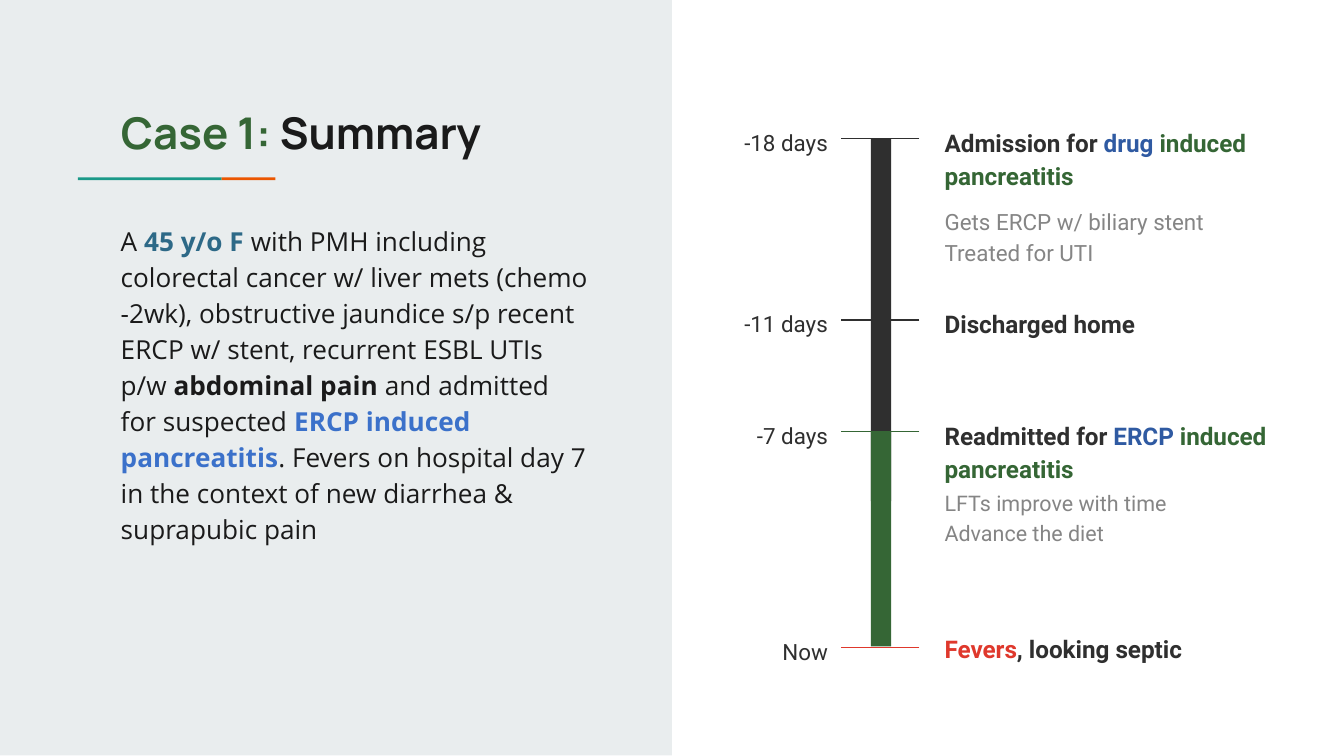
"""Build the case summary slide with its admission timeline."""
from lxml.etree import SubElement
from pptx import Presentation
from pptx.dml.color import RGBColor
from pptx.enum.shapes import MSO_CONNECTOR, MSO_SHAPE
from pptx.enum.text import MSO_ANCHOR, MSO_AUTO_SIZE, PP_ALIGN
from pptx.oxml.ns import qn
from pptx.util import Inches, Pt

COLORS = {
    "panel": "E9EDEE", "teal": "1A9988", "orange": "EB5600",
    "black": "1A1A1A", "dark": "2F2F2F", "gray": "858585",
    "green": "356635", "blue": "2F5AA2", "red": "DF382C",
    "steel": "2D6987", "sky": "3B71CA",
}

SUMMARY = [
    ("A ", "black", False),
    ("45 y/o F", "steel", True),
    (" with PMH including colorectal cancer w/ liver mets (chemo -2wk), "
     "obstructive jaundice s/p recent ERCP w/ stent, recurrent ESBL UTIs p/w ",
     "black", False),
    ("abdominal pain", "black", True),
    (" and admitted for suspected ", "black", False),
    ("ERCP induced pancreatitis", "sky", True),
    (". Fevers on hospital day 7 in the context of new diarrhea & suprapubic pain",
     "black", False),
]

EVENTS = [
    {"when": "-18 days", "top": 1.03, "color": "dark", "bar": 1.34,
     "heading": [[("Admission for ", "dark"), ("drug ", "blue"), ("induced", "green")],
                 [("pancreatitis", "green")]],
     "details": ["Gets ERCP w/ biliary stent", "Treated for UTI"], "detail_gap": 0.39},
    {"when": "-11 days", "top": 2.38, "color": "dark", "bar": 1.34,
     "heading": [[("Discharged home", "dark")]]},
    {"when": "-7 days", "top": 3.21, "color": "green", "bar": 1.59,
     "heading": [[("Readmitted for ", "dark"), ("ERCP", "blue"),
                  (" induced pancreatitis", "green")]],
     "details": ["LFTs improve with time", "Advance the diet"], "size": 11.5},
    {"when": "Now", "top": 4.82, "color": "red", "heading_rise": 0.23,
     "heading": [[("Fevers", "red"), (", looking septic", "dark")]]},
]


def write_text(frame, paragraphs, font="Roboto", size=12, bold=False,
               align=PP_ALIGN.LEFT, spacing=1.15):
    """Fill a text frame with paragraphs of (text, color[, bold]) runs."""
    frame.word_wrap = True
    frame.auto_size = MSO_AUTO_SIZE.NONE
    frame.vertical_anchor = MSO_ANCHOR.TOP
    frame.margin_left = frame.margin_right = Inches(0.1)
    frame.margin_top = frame.margin_bottom = Inches(0.1)
    for index, runs in enumerate(paragraphs):
        paragraph = frame.paragraphs[0] if index == 0 else frame.add_paragraph()
        paragraph.alignment = align
        paragraph.line_spacing = spacing
        for text, color, *weight in runs:
            run = paragraph.add_run()
            run.text = text
            run.font.name = font
            run.font.size = Pt(size)
            run.font.bold = weight[0] if weight else bold
            run.font.color.rgb = RGBColor.from_string(COLORS[color])


class SlideBuilder:
    """Hold the current slide and draw each kind of element on it."""

    def __init__(self, slide):
        """Keep the slide to draw on."""
        self.slide = slide

    def title(self, runs, left, top, width, height):
        """Place and format the title placeholder."""
        shape = self.slide.shapes.title
        shape.left, shape.top = Inches(left), Inches(top)
        shape.width, shape.height = Inches(width), Inches(height)
        write_text(shape.text_frame, [runs], font="Manrope", size=23.4,
                   bold=True, spacing=1.0)

    def rectangle(self, color, left, top, width, height):
        """Draw a plain filled rectangle."""
        shape = self.slide.shapes.add_shape(
            MSO_SHAPE.RECTANGLE, Inches(left), Inches(top), Inches(width), Inches(height))
        shape.shadow.inherit = False
        shape.fill.solid()
        shape.fill.fore_color.rgb = RGBColor.from_string(COLORS[color])
        shape.line.fill.background()
        return shape

    def panel(self, color, left, top, width, height):
        """Draw a rectangle behind the title."""
        shape = self.rectangle(color, left, top, width, height)
        self.slide.shapes.title._element.addprevious(shape._element)

    def text(self, paragraphs, left, top, width, height, **style):
        """Add a text box."""
        shape = self.slide.shapes.add_textbox(
            Inches(left), Inches(top), Inches(width), Inches(height))
        write_text(shape.text_frame, paragraphs, **style)

    def tick(self, color, top, left=6.26, right=6.84):
        """Draw a thin horizontal timeline mark."""
        line = self.slide.shapes.add_connector(
            MSO_CONNECTOR.STRAIGHT, Inches(right), Inches(top), Inches(left), Inches(top))
        line.line.color.rgb = RGBColor.from_string(COLORS[color])
        line.line.width = Pt(0.75)
        SubElement(line._element.spPr, qn("a:effectLst"))

    def event(self, when, top, color, heading, bar=0, details=(), size=12,
              detail_gap=0.31, heading_rise=0.21):
        """Draw one timeline event with its bar, mark and texts."""
        if bar:
            self.rectangle(color, 6.48, top, 0.15, bar + 0.01)
        self.tick(color, top)
        self.text(heading, 6.93, top - heading_rise, 2.98, 0.46, size=13, bold=True)
        if details:
            self.text([[(line, "gray")] for line in details],
                      6.93, top + detail_gap, 2.98, 0.69, size=size)
        self.text([[(when, "dark")]], 5.43, top - 0.2, 0.83, 0.58, align=PP_ALIGN.RIGHT)


def main():
    """Build and save the presentation."""
    presentation = Presentation()
    presentation.slide_width = Inches(10)
    presentation.slide_height = presentation.slide_width * 9 // 16
    builder = SlideBuilder(presentation.slides.add_slide(presentation.slide_layouts[5]))
    builder.panel("panel", 0, 0, 5, 5.62)
    builder.rectangle("teal", 0.58, 1.32, 1.07, 0.02)
    builder.rectangle("orange", 1.65, 1.32, 0.4, 0.02)
    builder.title([("Case 1:", "green"), (" Summary", "black")], 0.8, 0.69, 4.12, 0.59)
    builder.text([SUMMARY], 0.8, 1.54, 3.69, 3.31, font="Open Sans", size=14)
    for event in EVENTS:
        builder.event(**event)
    presentation.save("out.pptx")


if __name__ == "__main__":
    main()
